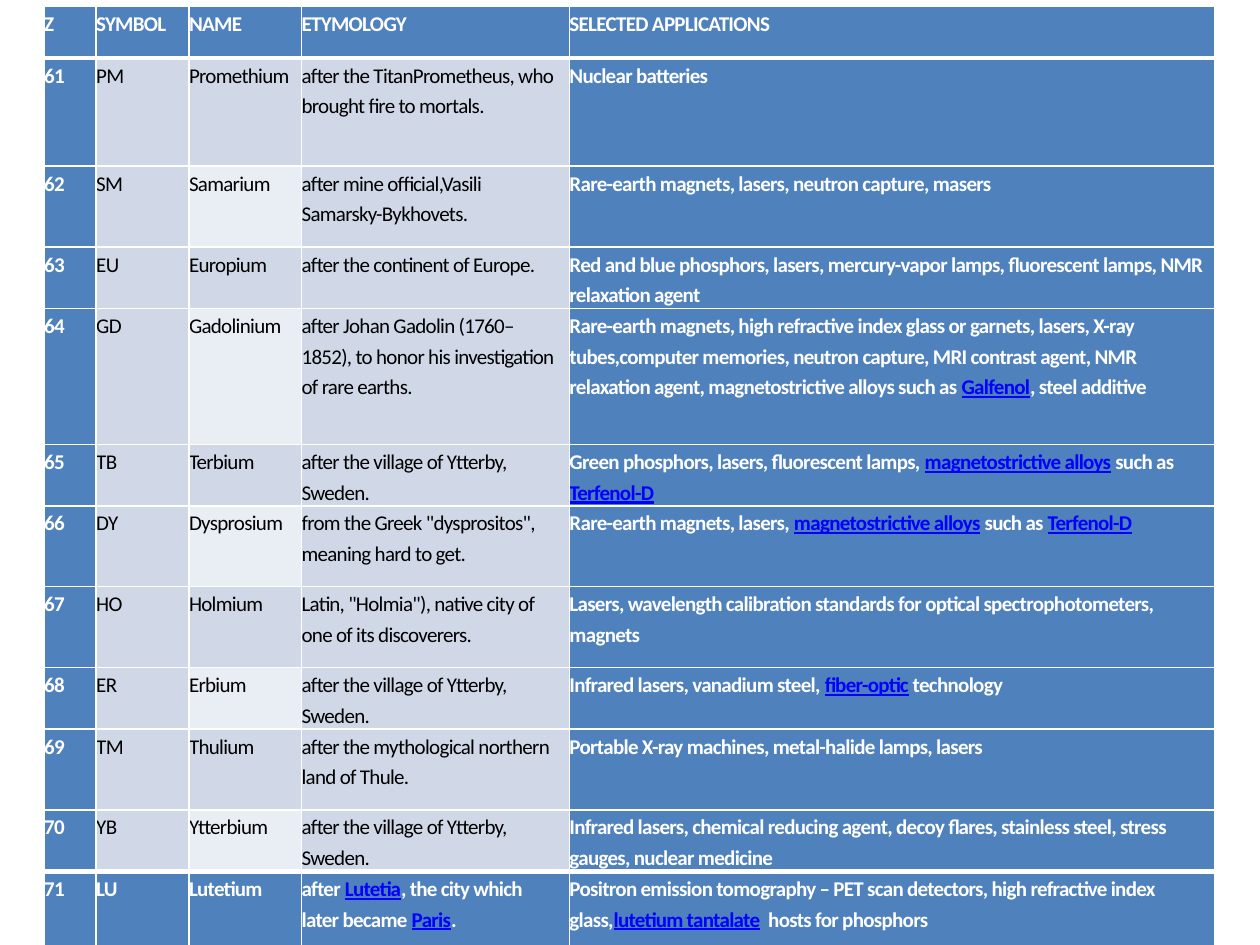
from lxml import etree
from pptx import Presentation
from pptx.dml.color import RGBColor
from pptx.oxml import ns
from pptx.util import Cm, Pt

# Content: text between bars is a link; the first entry is the row height in cm
HEAD = (1.04, "Z", "SYMBOL", "NAME", "ETYMOLOGY", "SELECTED APPLICATIONS")
ROWS = [
    HEAD,
    (2.18, "61", "PM", "Promethium",
     "after the TitanPrometheus, who brought fire to mortals.",
     "Nuclear batteries"),
    (1.63, "62", "SM", "Samarium",
     "after mine official,Vasili Samarsky-Bykhovets.",
     "Rare-earth magnets, lasers, neutron capture, masers"),
    (1.07, "63", "EU", "Europium",
     "after the continent of Europe.",
     "Red and blue phosphors, lasers, mercury-vapor lamps, "
     "fluorescent lamps, NMR relaxation agent"),
    (2.74, "64", "GD", "Gadolinium",
     "after Johan Gadolin (1760–1852), to honor his investigation of rare earths.",
     "Rare-earth magnets, high refractive index glass or garnets, lasers, "
     "X-ray tubes,computer memories, neutron capture, MRI contrast "
     "agent, NMR relaxation agent, magnetostrictive alloys such as "
     "|Galfenol|, steel additive"),
    (1.07, "65", "TB", "Terbium",
     "after the village of Ytterby, Sweden.",
     "Green phosphors, lasers, fluorescent lamps, "
     "|magnetostrictive alloys| such as |Terfenol-D|"),
    (1.63, "66", "DY", "Dysprosium",
     'from the Greek "dysprositos", meaning hard to get.',
     "Rare-earth magnets, lasers, "
     "|magnetostrictive alloys| such as |Terfenol-D|"),
    (1.63, "67", "HO", "Holmium",
     'Latin, "Holmia"), native city of one of its discoverers.',
     "Lasers, wavelength calibration standards for "
     "optical spectrophotometers, magnets"),
    (1.07, "68", "ER", "Erbium",
     "after the village of Ytterby, Sweden.",
     "Infrared lasers, vanadium steel, |fiber-optic| technology"),
    (1.63, "69", "TM", "Thulium",
     "after the mythological northern land of Thule.",
     "Portable X-ray machines, metal-halide lamps, lasers"),
    (1.07, "70", "YB", "Ytterbium",
     "after the village of Ytterby, Sweden.",
     "Infrared lasers, chemical reducing agent, decoy flares, "
     "stainless steel, stress gauges, nuclear medicine"),
    (1.63, "71", "LU", "Lutetium",
     "after |Lutetia|, the city which later became |Paris|.",
     "Positron emission tomography – PET scan detectors, high refractive "
     "index glass,|lutetium tantalate|  hosts for phosphors"),
]
COLS = (1.05, 1.87, 2.27, 5.4, 13)

BLUE = RGBColor(0x4F, 0x81, 0xBD)
PALE = RGBColor(0xD0, 0xD8, 0xE8)
LIGHT = RGBColor(0xE9, 0xED, 0xF4)
WHITE = RGBColor(0xFF, 0xFF, 0xFF)
BLACK = RGBColor(0, 0, 0)
LINK = RGBColor(0, 0, 0xFF)


def set_edges(cell, top, base):
    """Draw white borders; top and base are widths in points."""
    props = cell._tc.get_or_add_tcPr()
    for tag, width in (("lnL", 1), ("lnR", 1), ("lnT", top), ("lnB", base)):
        line = etree.SubElement(props, ns.qn("a:" + tag), w=str(Pt(width)))
        fill = etree.SubElement(line, ns.qn("a:solidFill"))
        etree.SubElement(fill, ns.qn("a:srgbClr"), val=str(WHITE))


def set_words(cell, words, strong):
    """Write the words, with every second part shown as a link."""
    para = cell.text_frame.paragraphs[0]
    para.line_spacing = 1.2
    para.space_before, para.space_after = Pt(3), Pt(10)
    for i, part in enumerate(words.split("|")):
        if not part:
            continue
        link = i % 2 == 1
        run = para.add_run()
        run.text = part
        font = run.font
        font.name, font.size, font.bold = "Calibri", Pt(12), strong
        font.underline = link
        font.color.rgb = LINK if link else WHITE if strong else BLACK
        font._element.set("spc", "-40")


deck = Presentation()
deck.slide_width, deck.slide_height = Cm(25.4), Cm(19.05)
slide = deck.slides.add_slide(deck.slide_layouts[6])

# Table of elements
last, end = len(ROWS) - 1, len(COLS) - 1
table = slide.shapes.add_table(
    len(ROWS), len(COLS), Cm(0.89), Cm(0.13),
    Cm(sum(COLS)), Cm(sum(row[0] for row in ROWS))).table
table.first_col = table.last_col = table.last_row = True
for col, width in zip(table.columns, COLS):
    col.width = Cm(width)

for r, (height, *texts) in enumerate(ROWS):
    table.rows[r].height = Cm(height)
    for c, words in enumerate(texts):
        cell = table.cell(r, c)
        cell.margin_left = cell.margin_top = cell.margin_bottom = 0
        cell.margin_right = Cm(0.15)
        strong = r in (0, last) or c in (0, end)
        set_edges(cell, 3 if r in (1, last) else 1,
                  3 if r in (0, last - 1) else 1)
        # The name column is banded
        band = LIGHT if c == 2 and r % 2 == 0 else PALE
        cell.fill.solid()
        cell.fill.fore_color.rgb = BLUE if strong else band
        set_words(cell, words, strong)

deck.save("out.pptx")
